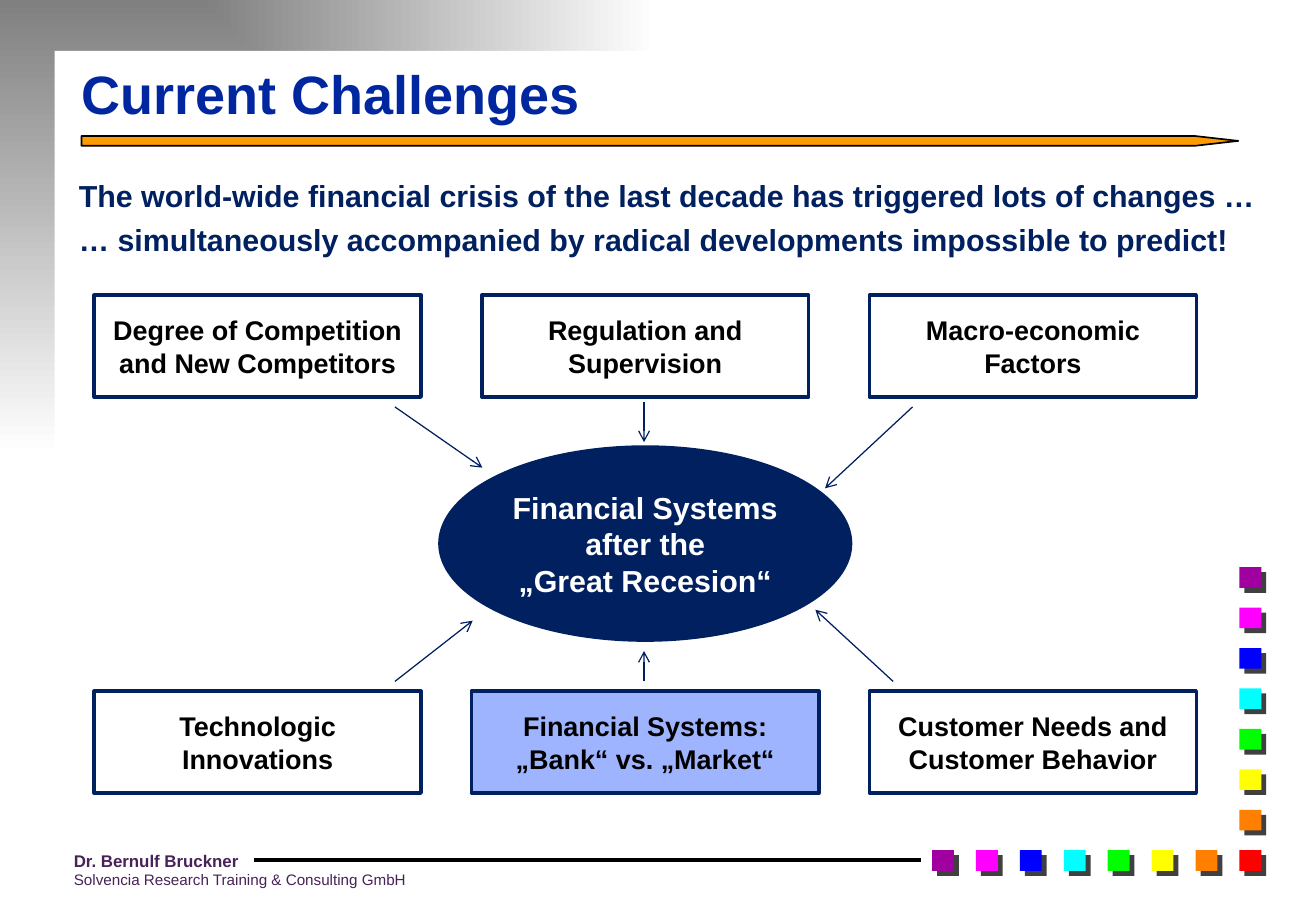
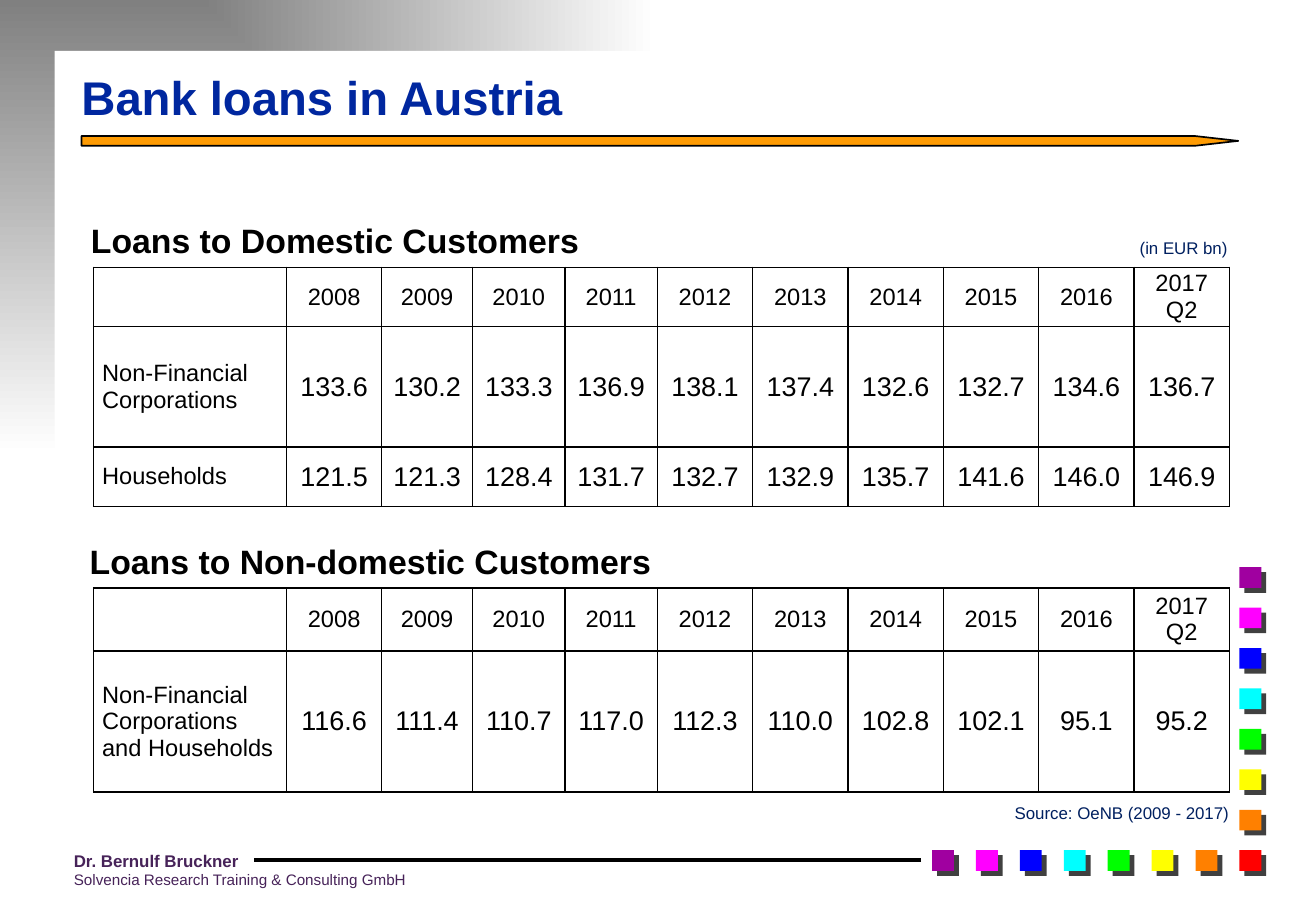
from lxml import etree
from pptx import Presentation
from pptx.dml.color import RGBColor
from pptx.enum.shapes import MSO_CONNECTOR, MSO_SHAPE
from pptx.enum.text import MSO_ANCHOR, MSO_AUTO_SIZE, PP_ALIGN
from pptx.oxml.ns import qn
from pptx.util import Inches, Pt

LEFT, CENTER, RIGHT = PP_ALIGN.LEFT, PP_ALIGN.CENTER, PP_ALIGN.RIGHT
TOP, MIDDLE, BOTTOM = MSO_ANCHOR.TOP, MSO_ANCHOR.MIDDLE, MSO_ANCHOR.BOTTOM
RECTANGLE, OVAL, PENTAGON = MSO_SHAPE.RECTANGLE, MSO_SHAPE.OVAL, MSO_SHAPE.PENTAGON
STRAIGHT = MSO_CONNECTOR.STRAIGHT

FONT = "Arial"
WHITE = RGBColor(0xFF, 0xFF, 0xFF)
BLACK = RGBColor(0x00, 0x00, 0x00)
GRAY = RGBColor(0x80, 0x80, 0x80)
NAVY = RGBColor(0x00, 0x20, 0x60)
TITLE_BLUE = RGBColor(0x00, 0x27, 0x9F)
LIGHT_BLUE = RGBColor(0x9F, 0xB4, 0xFF)
ORANGE = RGBColor(0xFE, 0x9B, 0x03)
PLUM = RGBColor(0x47, 0x23, 0x59)
RAINBOW = [RGBColor.from_string(code) for code in (
    "FF0000", "FF8000", "FFFF00", "00FF00", "00FFFF", "0000FF", "FF00FF", "A000A0")]

SLIDE_WIDTH, SLIDE_HEIGHT = 10.83, 7.5
CORNER_X, CORNER_Y = 10.2, 7
FIRST_X, FIRST_Y = 7.67, 4.67

AUTHOR = "Dr. Bernulf Bruckner\nSolvencia Research Training & Consulting GmbH"

CHALLENGES_TITLE = "Current Challenges"
CHALLENGES_LEAD = (
    "The world-wide financial crisis of the last decade has triggered lots of changes …\n"
    "… simultaneously accompanied by radical developments impossible to predict!")
CHALLENGES_CORE = "Financial Systems after the\n„Great Recesion“"
HIGHLIGHT = "Financial Systems:\n„Bank“ vs. „Market“"
FACTOR_ROWS = [
    (2.43, ["Degree of Competition and New Competitors",
            "Regulation and Supervision",
            "Macro-economic Factors"]),
    (5.69, ["Technologic Innovations",
            HIGHLIGHT,
            "Customer Needs and Customer Behavior"]),
]
FACTOR_CENTER, FACTOR_STEP, FACTOR_HEIGHT = 2.12, 3.19, 0.84
ARROWS = [
    (3.25, 3.35, 3.97, 3.85), (5.3, 3.31, 5.3, 3.64), (7.51, 3.35, 6.79, 4.02),
    (3.25, 5.61, 3.89, 5.11), (5.3, 5.61, 5.3, 5.36), (7.35, 5.61, 6.71, 5.02),
]

LOANS_TITLE = "Bank loans in Austria"
YEARS = ["2008", "2009", "2010", "2011", "2012", "2013", "2014", "2015", "2016", "2017 Q2"]
DOMESTIC = [
    ("Non-Financial Corporations",
     [133.6, 130.2, 133.3, 136.9, 138.1, 137.4, 132.6, 132.7, 134.6, 136.7]),
    ("Households",
     [121.5, 121.3, 128.4, 131.7, 132.7, 132.9, 135.7, 141.6, 146.0, 146.9]),
]
NON_DOMESTIC = [
    ("Non-Financial Corporations and Households",
     [116.6, 111.4, 110.7, 117.0, 112.3, 110.0, 102.8, 102.1, 95.1, 95.2]),
]
LOAN_TABLES = [
    # heading, heading left and top, table top, row heights, rows
    ("Loans to Domestic Customers", 0.65, 1.76, 2.2, [0.49, 0.99, 0.49], DOMESTIC),
    ("Loans to Non-domestic Customers", 0.64, 4.4, 4.84, [0.52, 1.16], NON_DOMESTIC),
]
LOAN_NOTES = [
    ("(in EUR bn)", (9.27, 1.91, 0.93, 0.27)),
    ("Source: OeNB (2009 - 2017)", (8.16, 6.56, 2.05, 0.27)),
]
TABLE_LEFT, TABLE_WIDTH = 0.77, 9.35
LEADING_COLUMNS = [1.59, 0.78, 0.75, 0.76, 0.76]


def inches(*lengths):
    return [Inches(length) for length in lengths]


def write(frame, text, size=16, color=BLACK, bold=False, align=LEFT, spacing=None):
    """Fill a text frame with one paragraph per line of text."""
    for index, line in enumerate(text.split("\n")):
        para = frame.add_paragraph() if index else frame.paragraphs[0]
        para.alignment = align
        if spacing:
            para.line_spacing = spacing
        span = para.add_run()
        span.text = line
        span.font.name, span.font.size, span.font.bold = FONT, Pt(size), bold
        span.font.color.rgb = color


def add_text(page, place, text, wrap=False, **style):
    frame = page.shapes.add_textbox(*inches(*place)).text_frame
    frame.word_wrap = wrap
    write(frame, text, **style)
    return frame


def add_box(page, kind, place, fill, line=None, width=2):
    box = page.shapes.add_shape(kind, *inches(*place))
    box.shadow.inherit = False
    box.fill.solid()
    box.fill.fore_color.rgb = fill
    if line is None:
        box.line.fill.background()
    else:
        box.line.color.rgb = line
        box.line.width = Pt(width)
    return box


def add_label_box(page, kind, place, fill, text, **style):
    frame = add_box(page, kind, place, fill, NAVY).text_frame
    frame.word_wrap = True
    frame.vertical_anchor = MIDDLE
    write(frame, text, bold=True, align=CENTER, **style)


def add_line(page, ends, color, width, arrow=False):
    line = page.shapes.add_connector(STRAIGHT, *inches(*ends))
    line.line.color.rgb = color
    line.line.width = Pt(width)
    properties = line._element.spPr
    if arrow:
        outline = properties.find(qn("a:ln"))
        etree.SubElement(outline, qn("a:tailEnd"), type="arrow")
    etree.SubElement(properties, qn("a:effectLst"))


def add_corner_gradient(page):
    """Gray in the top left corner, fading to white."""
    box = add_box(page, RECTANGLE, (0, 0, SLIDE_WIDTH - 0.01, SLIDE_HEIGHT - 0.01), WHITE)
    box.fill.gradient()
    for stop, color in zip(box.fill.gradient_stops, (GRAY, WHITE)):
        stop.color.rgb = color
    gradient = box._element.spPr.find(qn("a:gradFill"))
    gradient.remove(gradient.find(qn("a:lin")))
    path = etree.SubElement(gradient, qn("a:path"), path="rect")
    etree.SubElement(path, qn("a:fillToRect"), r="100000", b="100000")


def add_square(page, left, top, color):
    square = add_box(page, RECTANGLE, (left, top, 0.18, 0.17), color)
    effects = square._element.spPr.find(qn("a:effectLst"))
    shadow = etree.SubElement(effects, qn("a:outerShdw"), blurRad="0",
                              dist=str(Pt(4.2)), dir="2700000", algn="ctr", rotWithShape="0")
    etree.SubElement(shadow, qn("a:srgbClr"), val="404040")


def draw_shared_parts(page):
    add_corner_gradient(page)
    add_box(page, RECTANGLE, (0.45, 0.42, 10.37, 7.07), WHITE)
    last = len(RAINBOW) - 1
    for index, color in enumerate(RAINBOW):
        add_square(page, CORNER_X - index * (CORNER_X - FIRST_X) / last, CORNER_Y, color)
        if index:
            add_square(page, CORNER_X, CORNER_Y - index * (CORNER_Y - FIRST_Y) / last, color)
    rule = add_box(page, PENTAGON, (0.67, 1.12, 9.52, 0.08), ORANGE, BLACK, 1)
    rule.adjustments[0] = 4.42
    add_line(page, (7.58, 7.08, 2.09, 7.08), BLACK, 2)
    footer = add_text(page, (0.51, 6.95, 3.24, 0.42), AUTHOR, wrap=True,
                      size=9, color=PLUM)
    name = footer.paragraphs[0].runs[0].font
    name.size, name.bold = Pt(10), True


def prepare_layout(deck):
    """Give the Title Only layout the shared parts and the title's place."""
    layout = deck.slide_layouts[5]
    title, *others = layout.placeholders
    for placeholder in others:
        layout.shapes._spTree.remove(placeholder._element)
    title.left, title.top, title.width, title.height = inches(0.57, 0.44, 9.1, 0.64)
    page = deck.slides.add_slide(layout)
    draw_shared_parts(page)
    for shape in list(page.shapes)[1:]:
        layout.shapes._spTree.append(shape._element)
    return layout, page


def set_title(page, text, size):
    frame = page.shapes.title.text_frame
    frame.auto_size = MSO_AUTO_SIZE.NONE
    frame.vertical_anchor = BOTTOM
    write(frame, text, size=size, color=TITLE_BLUE, bold=True)


def draw_border(cell):
    properties = cell._tc.get_or_add_tcPr()
    for side in ("a:lnL", "a:lnR", "a:lnT", "a:lnB"):
        line = etree.SubElement(properties, qn(side), w=str(Pt(1)))
        fill = etree.SubElement(line, qn("a:solidFill"))
        etree.SubElement(fill, qn("a:srgbClr"), val=str(BLACK))


def add_loan_table(page, top, heights, rows):
    grid = [["", *YEARS]]
    grid += [[label, *(f"{value:.1f}" for value in values)] for label, values in rows]
    count = len(grid[0])
    rest = count - len(LEADING_COLUMNS)
    widths = LEADING_COLUMNS + [(TABLE_WIDTH - sum(LEADING_COLUMNS)) / rest] * rest
    place = inches(TABLE_LEFT, top, TABLE_WIDTH, sum(heights))
    table = page.shapes.add_table(len(grid), count, *place).table
    table.first_row = table.horz_banding = False
    for column, width in zip(table.columns, widths):
        column.width = Inches(width)
    for row, height in zip(table.rows, heights):
        row.height = Inches(height)
    for row_index, texts in enumerate(grid):
        for column_index, text in enumerate(texts):
            cell = table.cell(row_index, column_index)
            cell.margin_left = cell.margin_right = Inches(0.07)
            cell.margin_top = cell.margin_bottom = 0
            cell.vertical_anchor = MIDDLE
            draw_border(cell)
            cell.fill.background()
            if text:
                write(cell.text_frame, text,
                      size=16 if row_index and column_index else 14,
                      align=CENTER if column_index else LEFT)


def build_challenges(page):
    set_title(page, CHALLENGES_TITLE, 32)
    add_label_box(page, OVAL, (3.62, 3.68, 3.38, 1.59), NAVY, CHALLENGES_CORE,
                  size=18, color=WHITE)
    for top, factors in FACTOR_ROWS:
        for index, text in enumerate(factors):
            width, fill = (2.86, LIGHT_BLUE) if text == HIGHLIGHT else (2.69, WHITE)
            left = FACTOR_CENTER + index * FACTOR_STEP - width / 2
            add_label_box(page, RECTANGLE, (left, top, width, FACTOR_HEIGHT), fill, text)
    for ends in ARROWS:
        add_line(page, ends, NAVY, 0.75, arrow=True)
    add_text(page, (0.55, 1.35, 9.98, 0.83), CHALLENGES_LEAD,
             size=18, color=NAVY, bold=True, spacing=1.2)


def build_loans(page):
    set_title(page, LOANS_TITLE, 28)
    for heading, left, heading_top, top, heights, rows in LOAN_TABLES:
        add_text(page, (left, heading_top, 4.86, 0.44), heading, wrap=True,
                 size=20, bold=True)
        add_loan_table(page, top, heights, rows)
    for text, place in LOAN_NOTES:
        add_text(page, place, text, size=10, color=NAVY, align=RIGHT)


def main():
    deck = Presentation()
    deck.slide_width, deck.slide_height = inches(SLIDE_WIDTH, SLIDE_HEIGHT)
    layout, page = prepare_layout(deck)
    build_challenges(page)
    build_loans(deck.slides.add_slide(layout))
    deck.save("out.pptx")


if __name__ == "__main__":
    main()
